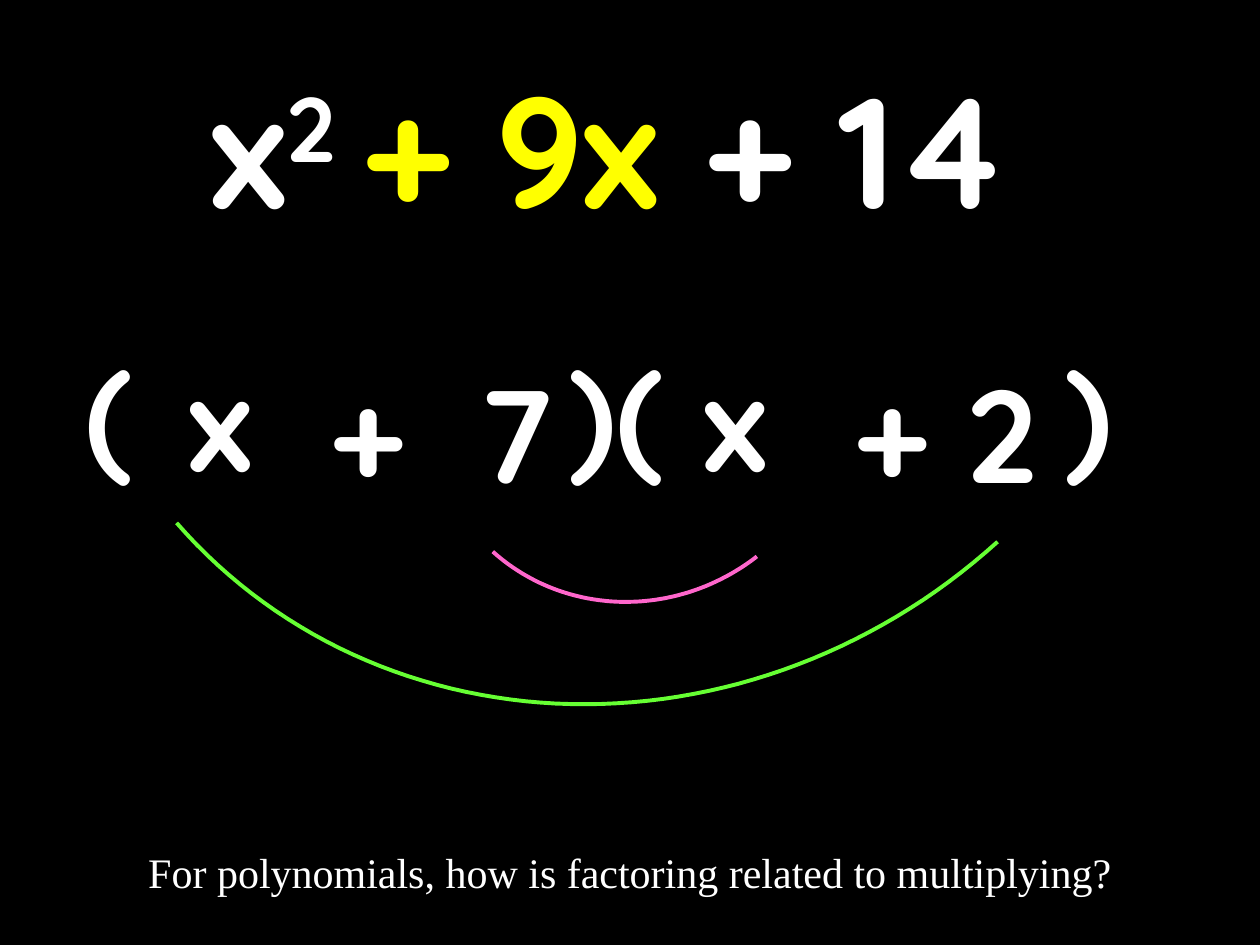
from math import cos, radians, sin

from pptx import Presentation
from pptx.dml.color import RGBColor
from pptx.enum.text import MSO_ANCHOR, MSO_AUTO_SIZE, PP_ALIGN
from pptx.util import Pt

COLORS = {
    "background": "000000",
    "text": "FFFFFF",
    "middle_term": "FFFF00",
    "outer_arc": "66FF33",
    "inner_arc": "FF66CC",
}
MATH_FONT = "Quicksand"
BODY_FONT = "Times New Roman"


def color(name):
    return RGBColor.from_string(COLORS[name])


def place(shape, box):
    shape.left, shape.top, shape.width, shape.height = (Pt(value) for value in box)


def format_text(shape, font_name, size, bold=False, anchor=MSO_ANCHOR.MIDDLE):
    """Apply the shared centred white style and return the only paragraph."""
    frame = shape.text_frame
    frame.word_wrap = True
    frame.auto_size = MSO_AUTO_SIZE.NONE
    frame.vertical_anchor = anchor
    para = frame.paragraphs[0]
    para.alignment = PP_ALIGN.CENTER
    para.font.name = font_name
    para.font.size = Pt(size)
    para.font.bold = bold
    para.font.color.rgb = color("text")
    return para


def add_trinomial(page, box):
    title = page.shapes.title
    place(title, box)
    para = format_text(title, MATH_FONT, 90, bold=True)
    spans = []
    for text in ("x", "2 ", "+ 9x", " + 14"):
        span = para.add_run()
        span.text = text
        spans.append(span)
    spans[1]._r.get_or_add_rPr().set("baseline", "30000")
    spans[2].font.color.rgb = color("middle_term")


def add_factors(page, box):
    """Place each symbol by its centre and its drop from the top of the box."""
    left, top, _, height = box
    symbols = [
        ("(", 38, 0), (")(", 328.5, 0), (")", 598.5, 0),
        ("x", 102, 6), ("x", 396, 6),
        ("+", 186, 12), ("7", 271.5, 12), ("+ 2", 516, 12),
    ]
    width = 144
    for text, center, drop in symbols:
        symbol = page.shapes.add_textbox(
            Pt(left + center - width / 2), Pt(top + drop), Pt(width), Pt(height))
        symbol.text_frame.text = text
        format_text(symbol, MATH_FONT, 75, bold=True)


def add_arc(page, box, rotation, start, end, line_color):
    """Fit an elliptical arc and its centre into the box, then rotate it."""
    left, top, width, height = box
    steps = 60
    angles = [radians(start + (end - start) * step / steps) for step in range(steps + 1)]
    points = [(0, 0)] + [(cos(angle), sin(angle)) for angle in angles]
    columns, rows = zip(*points)
    x_scale = width / (max(columns) - min(columns))
    y_scale = height / (max(rows) - min(rows))
    center, *curve = [
        (Pt(left + (x - min(columns)) * x_scale), Pt(top + (y - min(rows)) * y_scale))
        for x, y in points
    ]
    builder = page.shapes.build_freeform(*center)
    builder.move_to(*curve[0])
    builder.add_line_segments(curve[1:], close=False)
    arc = builder.convert_to_shape()
    arc.rotation = rotation
    arc.shadow.inherit = False
    arc.fill.background()
    arc.line.color.rgb = color(line_color)
    arc.line.width = Pt(2.25)


def add_question(page, box):
    question = page.shapes.add_textbox(*(Pt(value) for value in box))
    question.text_frame.text = "For polynomials, how is factoring related to multiplying?"
    format_text(question, BODY_FONT, 24, anchor=MSO_ANCHOR.TOP)


def main():
    deck = Presentation()
    deck.slide_width, deck.slide_height = Pt(720), Pt(540)
    page = deck.slides.add_slide(deck.slide_layouts[5])
    page.background.fill.solid()
    page.background.fill.fore_color.rgb = color("background")

    add_trinomial(page, (30, 18, 636, 132))
    add_question(page, (30, 480, 660, 36))
    add_factors(page, (24, 168, 636, 132))
    add_arc(page, (162, 146.2, 347, 316), 139, -91.3, 0, "outer_arc")
    add_arc(page, (295.2, 252, 118.8, 114.5), 139.5, -87.2, -7.2, "inner_arc")
    deck.save("out.pptx")


if __name__ == "__main__":
    main()
